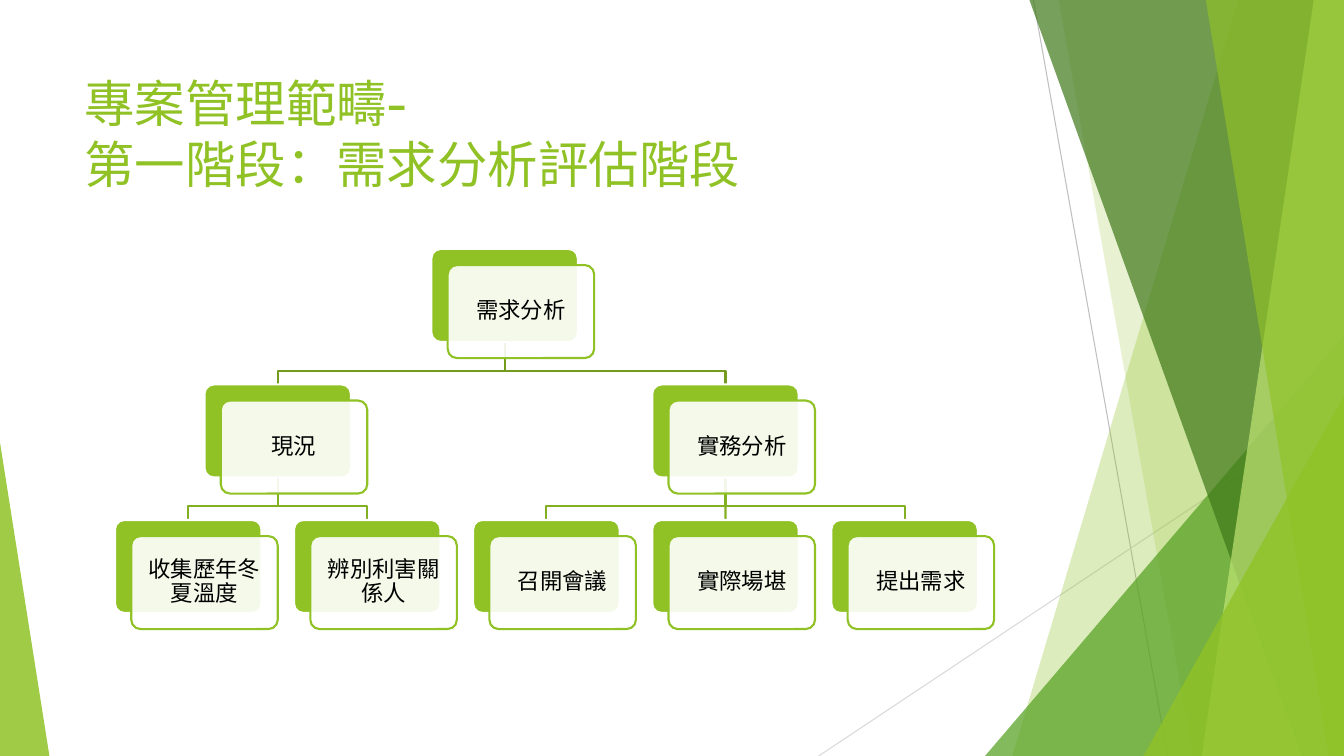
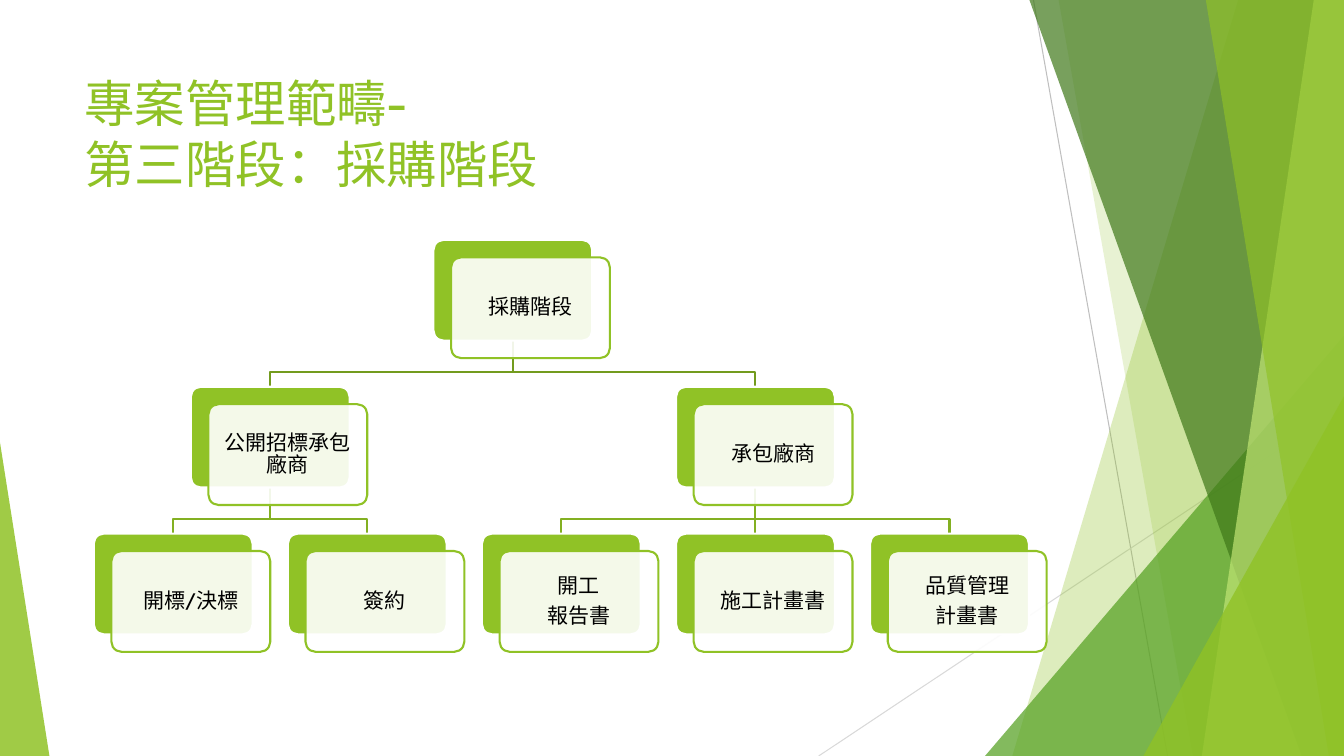
from lxml import etree
from pptx import Presentation
from pptx import util as u
from pptx.dml.color import RGBColor
from pptx.enum import shapes, text
from pptx.oxml.ns import qn

FONT = "Cabin"
GREEN, LEAF, FOREST, LIME = "90C226", "54A021", "3F7819", "C0E474"
BRANCH_LINES = ["739B1E", "83B022"]
WHITE, BLACK = "FFFFFF", "000000"
W, H = 13.33, 7.5

SLIDES = [
    {
        "title": "專案管理範疇-\v第一階段：需求分析評估階段",
        "box": (1.14, 2.47, 8.72),
        "size": 16,
        "root_shift": 0.03,
        "tree": ("需求分析", [
            ("現況", [("收集歷年冬夏溫度", []), ("辨別利害關係人", [])]),
            ("實務分析", [("召開會議", []), ("實際場堪", []), ("提出需求", [])]),
        ]),
    },
    {
        "title": "專案管理範疇-\v第三階段：採購階段",
        "box": (0.93, 2.38, 9.45),
        "size": 15,
        "root_shift": 0,
        "tree": ("採購階段", [
            ("公開招標承包廠商", [("開標/決標", []), ("簽約", [])]),
            ("承包廠商", [("開工\n報告書", []), ("施工計畫書", []), ("品質管理\n計畫書", [])]),
        ]),
    },
]


def color(hex_code):
    return RGBColor.from_string(hex_code)


def paint(sp, fill=None, opacity=100, line=None):
    sp.shadow.inherit = False
    if fill:
        sp.fill.solid()
        sp.fill.fore_color.rgb = color(fill)
        if opacity < 100:
            clr = sp.fill._xPr.find(qn("a:solidFill"))[0]
            etree.SubElement(clr, qn("a:alpha"), val=str(opacity * 1000))
    else:
        sp.fill.background()
    if line:
        sp.line.color.rgb = color(line)
        sp.line.width = u.Pt(1.5)
    else:
        sp.line.fill.background()


def style(p, size, hex_code):
    p.font.name = FONT
    p.font.size = u.Pt(size)
    p.font.color.rgb = color(hex_code)


def add_path(s, points, close):
    pts = [(u.Inches(x), u.Inches(y)) for x, y in points]
    builder = s.shapes.build_freeform(*pts[0])
    builder.add_line_segments(pts[1:], close=close)
    return builder.convert_to_shape()


def add_hairline(s, x1, y1, x2, y2, hex_code):
    cxn = s.shapes.add_connector(
        shapes.MSO_CONNECTOR.STRAIGHT, *map(u.Inches, (x1, y1, x2, y2)))
    cxn.line.color.rgb = color(hex_code)
    cxn.line.width = u.Pt(0.75)
    etree.SubElement(cxn._element.spPr, qn("a:effectLst"))


def add_band(s, top_x, bottom_x, fill, opacity):
    sp = add_path(s, [(top_x, 0), (W, 0), (W, H), (bottom_x, H)], True)
    paint(sp, fill, opacity)


def add_corner(s, left, top, width, apex, fill, opacity):
    sp = s.shapes.add_shape(
        shapes.MSO_SHAPE.ISOSCELES_TRIANGLE,
        *map(u.Inches, (left, top, width, H - top)))
    sp.adjustments[0] = apex
    paint(sp, fill, opacity)


def add_backdrop(s):
    add_hairline(s, 10.25, 0, 11.58, H, "BFBFBF")
    add_hairline(s, W, 4.03, 8.12, H, "D9D9D9")
    add_band(s, 12.28, 10.04, GREEN, 30)
    add_band(s, 10.5, 11.83, GREEN, 20)
    add_corner(s, 9.77, 3.33, 3.56, 1, LEAF, 72)
    add_band(s, 10.21, 12.91, FOREST, 70)
    add_band(s, 13.03, 11.92, LIME, 70)
    add_band(s, 11.96, 13.18, GREEN, 65)
    add_corner(s, 11.34, 3.93, 1.99, 1, GREEN, 80)
    add_corner(s, 0, 4.39, 0.49, 0, GREEN, 85)


def add_title(s, title):
    tf = s.shapes.add_textbox(*map(u.Inches, (0.74, 0.67, 9.4, 1.44))).text_frame
    tf.word_wrap = True
    p = tf.paragraphs[0]
    p.text = title
    style(p, 36, GREEN)


def add_card(s, left, top, width, height, label, size):
    dx, dy = width / 9, 0.11 * width
    for x, y, fill, opacity, line in (
            (left, top, GREEN, 100, WHITE),
            (left + dx, top + dy, WHITE, 90, GREEN)):
        sp = s.shapes.add_shape(
            shapes.MSO_SHAPE.ROUNDED_RECTANGLE,
            *map(u.Inches, (x, y, width, height)))
        sp.adjustments[0] = 0.1
        paint(sp, fill, opacity, line)
    tf = sp.text_frame
    tf.word_wrap = True
    tf.vertical_anchor = text.MSO_ANCHOR.MIDDLE
    tf.margin_left = tf.margin_right = u.Inches(0.1)
    tf.margin_top = tf.margin_bottom = u.Inches(0.1)
    tf.text = label
    for p in tf.paragraphs:
        p.alignment = text.PP_ALIGN.CENTER
        p.line_spacing = 0.9
        p.space_after = u.Pt(0.35 * size)
        style(p, size, BLACK)


def count_leaves(node):
    return sum(map(count_leaves, node[1])) or 1


def add_org_chart(s, left, top, width, tree, size, root_shift):
    card_w = width * 9 / (11 * count_leaves(tree) - 1)
    card_h = 0.635 * card_w
    pitch, level = card_w * 11 / 9, 0.925 * card_w
    cards, branches = [], []

    def place(node, first_leaf, depth):
        label, children = node
        y = top + depth * level
        xs, leaf = [], first_leaf
        for child in children:
            xs.append(place(child, leaf, depth + 1))
            leaf += count_leaves(child)
        x = (xs[0] + xs[-1]) / 2 if xs else left + first_leaf * pitch
        if depth == 0:
            x += root_shift
        cards.append((x, y, label))
        branches.extend((x, child_x, y, depth) for child_x in xs)
        return x

    place(tree, 0, 0)
    for x, child_x, y, depth in branches:
        start, end = x + card_w / 2, child_x + card_w / 2
        bottom = y + card_h
        bend = bottom + 0.68 * (level - card_h)
        points = [(start, bottom), (start, bend), (end, bend), (end, y + level)]
        if abs(start - end) < 0.01:
            points = [points[0], points[-1]]
        paint(add_path(s, points, False), line=BRANCH_LINES[depth])
    for x, y, label in cards:
        add_card(s, x, y, card_w, card_h, label, size)


def add_phase_slide(prs, title, box, size, root_shift, tree):
    s = prs.slides.add_slide(prs.slide_layouts[6])
    add_backdrop(s)
    add_title(s, title)
    add_org_chart(s, *box, tree, size, root_shift)


def main():
    prs = Presentation()
    prs.slide_width, prs.slide_height = u.Inches(W), u.Inches(H)
    for content in SLIDES:
        add_phase_slide(prs, **content)
    prs.save("out.pptx")


if __name__ == "__main__":
    main()
